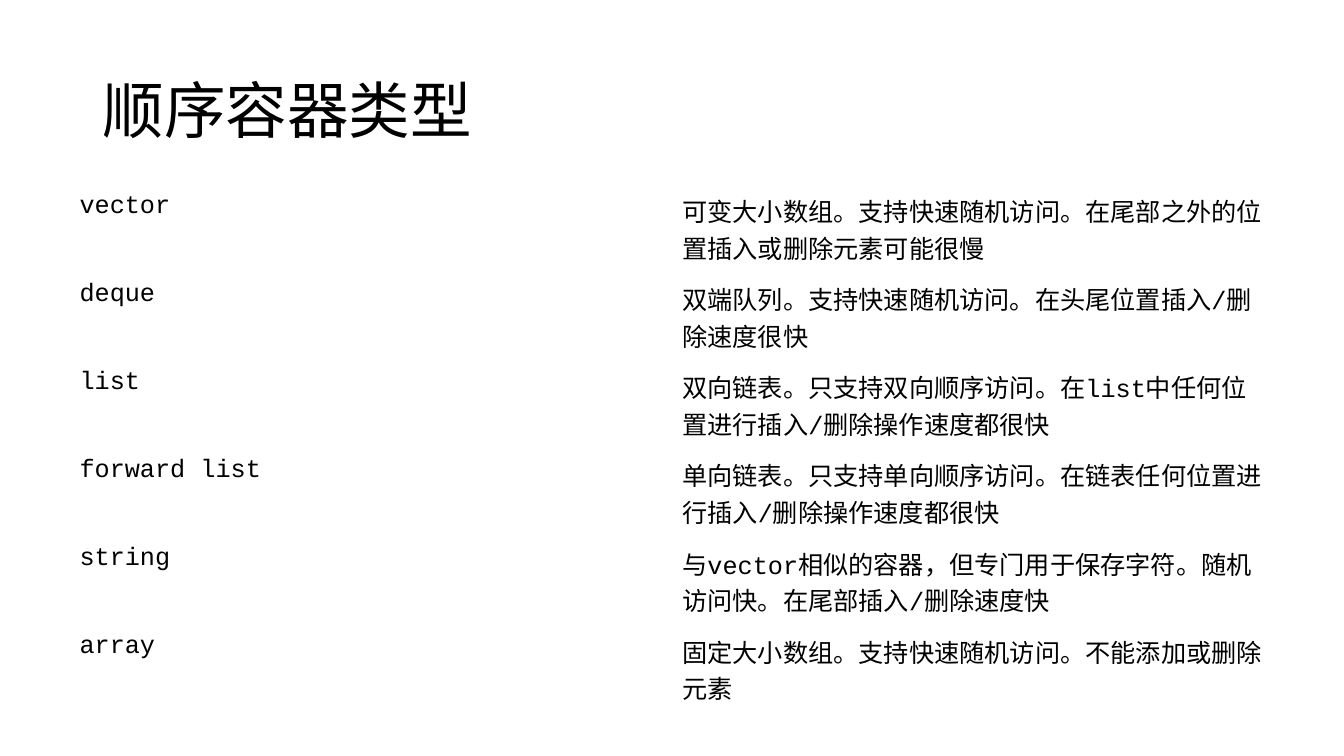
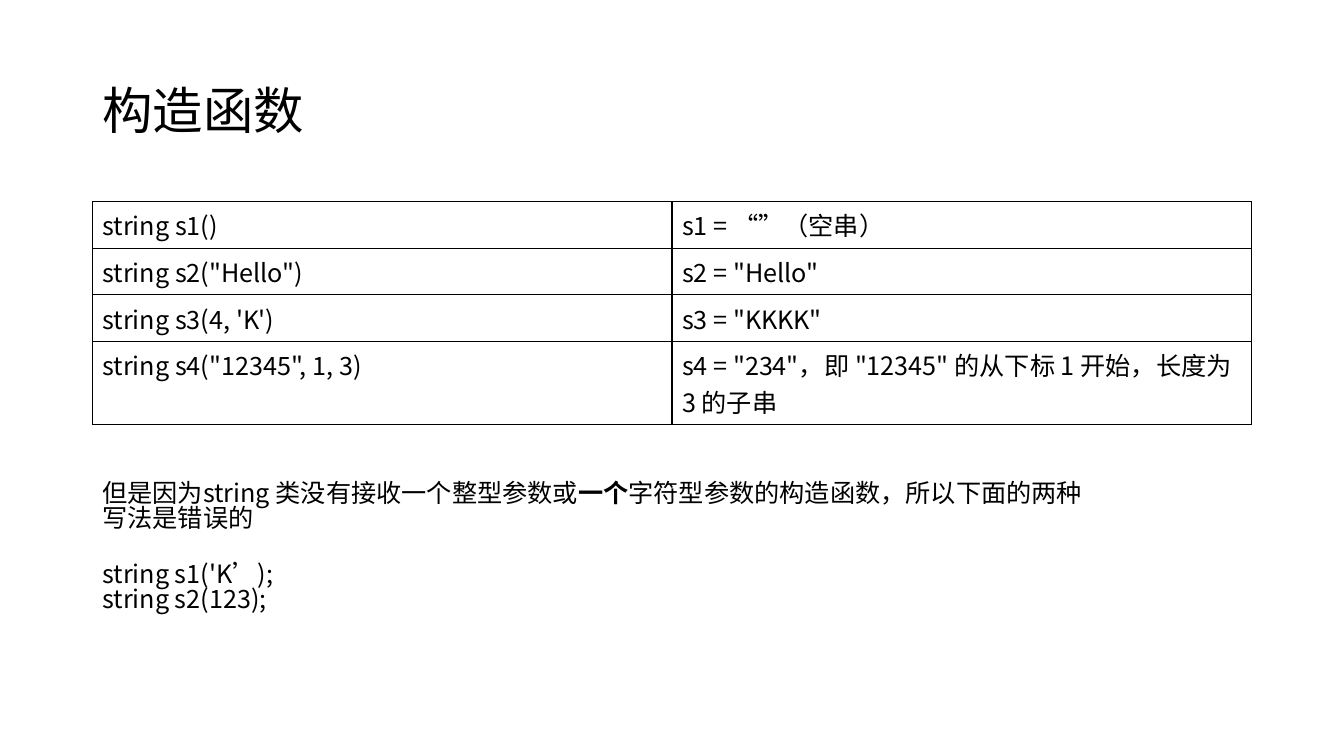
from dataclasses import dataclass

from lxml import etree
from pptx import Presentation
from pptx.dml.color import RGBColor
from pptx.enum.text import MSO_ANCHOR, PP_ALIGN
from pptx.oxml.ns import qn
from pptx.util import Cm, Pt

LEFT, MIDDLE = PP_ALIGN.LEFT, MSO_ANCHOR.MIDDLE
TITLE_ONLY = 5
BLACK = "000000"
SANS, MONO = "Noto Sans CJK SC", "Courier New"
BODY_SIZE = 18
MARGIN, CONTENT_W = 2.33, 29.21


@dataclass
class TableSpec:
    left: float
    top: float
    width: float
    row_height: float
    font: str
    rows: list[tuple[str, str]]
    border: float = 0


CONTAINERS = TableSpec(1.75, 4.72, 30.38, 2.22, MONO, [
    ("vector", "可变大小数组。支持快速随机访问。在尾部之外的位置插入或删除元素可能很慢"),
    ("deque", "双端队列。支持快速随机访问。在头尾位置插入/删除速度很快"),
    ("list", "双向链表。只支持双向顺序访问。在list中任何位置进行插入/删除操作速度都很快"),
    ("forward list", "单向链表。只支持单向顺序访问。在链表任何位置进行插入/删除操作速度都很快"),
    ("string", "与vector相似的容器，但专门用于保存字符。随机访问快。在尾部插入/删除速度快"),
    ("array", "固定大小数组。支持快速随机访问。不能添加或删除元素"),
])

CONSTRUCTORS = TableSpec(MARGIN, 5.08, CONTENT_W, 1.04, SANS, [
    ("string s1()", "s1 = “”（空串）"),
    ('string s2("Hello")', 's2 = "Hello"'),
    ("string s3(4, 'K')", 's3 = "KKKK"'),
    ('string s4("12345", 1, 3)', 's4 = "234"，即 "12345" 的从下标 1 开始，长度为 3 的子串'),
], border=1)

# Each paragraph is a list of (text, bold) runs
NOTE = [
    [("但是因为string 类没有接收一个整型参数或", False), ("一个", True),
     ("字符型参数的构造函数，所以下面的两种写法是错误的", False)],
    [("string s1('K’);", False)],
    [("string s2(123);", False)],
]


def rgb(value: str) -> RGBColor:
    return RGBColor.from_string(value)


def style(p, size: float, font: str = SANS) -> None:
    """Format a paragraph; Chinese text always uses the sans face."""
    p.alignment = LEFT
    p.font.size = Pt(size)
    p.font.color.rgb = rgb(BLACK)
    p.font.name = font
    props = p._p.get_or_add_pPr().find(qn("a:defRPr"))
    etree.SubElement(props, qn("a:ea"), typeface=SANS)


def add_slide(prs, title: str, size: float):
    s = prs.slides.add_slide(prs.slide_layouts[TITLE_ONLY])
    sp = s.shapes.title
    sp.left, sp.top, sp.width, sp.height = Cm(MARGIN), Cm(1.01), Cm(CONTENT_W), Cm(3.68)
    tf = sp.text_frame
    tf.text = title
    tf.vertical_anchor = MIDDLE
    p = tf.paragraphs[0]
    p.line_spacing = 0.9
    style(p, size)
    return s


def add_borders(cell, width: float) -> None:
    props = cell._tc.get_or_add_tcPr()
    for i, side in enumerate(("lnL", "lnR", "lnT", "lnB")):
        line = etree.Element(qn(f"a:{side}"), w=str(Pt(width)))
        fill = etree.SubElement(line, qn("a:solidFill"))
        etree.SubElement(fill, qn("a:srgbClr"), val=BLACK)
        props.insert(i, line)


def add_table(s, spec: TableSpec) -> None:
    n = len(spec.rows)
    table = s.shapes.add_table(n, 2, Cm(spec.left), Cm(spec.top), Cm(spec.width),
                               Cm(spec.row_height * n)).table
    table.first_row = table.horz_banding = False
    for i, row in enumerate(spec.rows):
        for j, text in enumerate(row):
            cell = table.cell(i, j)
            cell.text = text
            cell.fill.background()
            style(cell.text_frame.paragraphs[0], BODY_SIZE, spec.font)
            if spec.border:
                add_borders(cell, spec.border)


def add_note(s) -> None:
    tf = s.shapes.add_textbox(Cm(MARGIN), Cm(12.04), Cm(25.25), Cm(4.88)).text_frame
    tf.word_wrap = True
    for i, runs in enumerate(NOTE):
        p = tf.add_paragraph() if i else tf.paragraphs[0]
        p.line_spacing = 0.83
        for text, bold in runs:
            r = p.add_run()
            r.text = text
            if bold:
                r.font.bold = True
        style(p, BODY_SIZE)
    # Set the code lines apart from the explanation
    tf.paragraphs[1].space_before = Pt(21.6)


def main() -> None:
    prs = Presentation()
    prs.slide_width, prs.slide_height = Cm(33.87), Cm(19.05)

    # Container types
    s = add_slide(prs, "顺序容器类型", 44)
    add_table(s, CONTAINERS)

    # String constructors
    s = add_slide(prs, "构造函数", 36)
    add_table(s, CONSTRUCTORS)
    add_note(s)

    prs.save("out.pptx")


if __name__ == "__main__":
    main()
